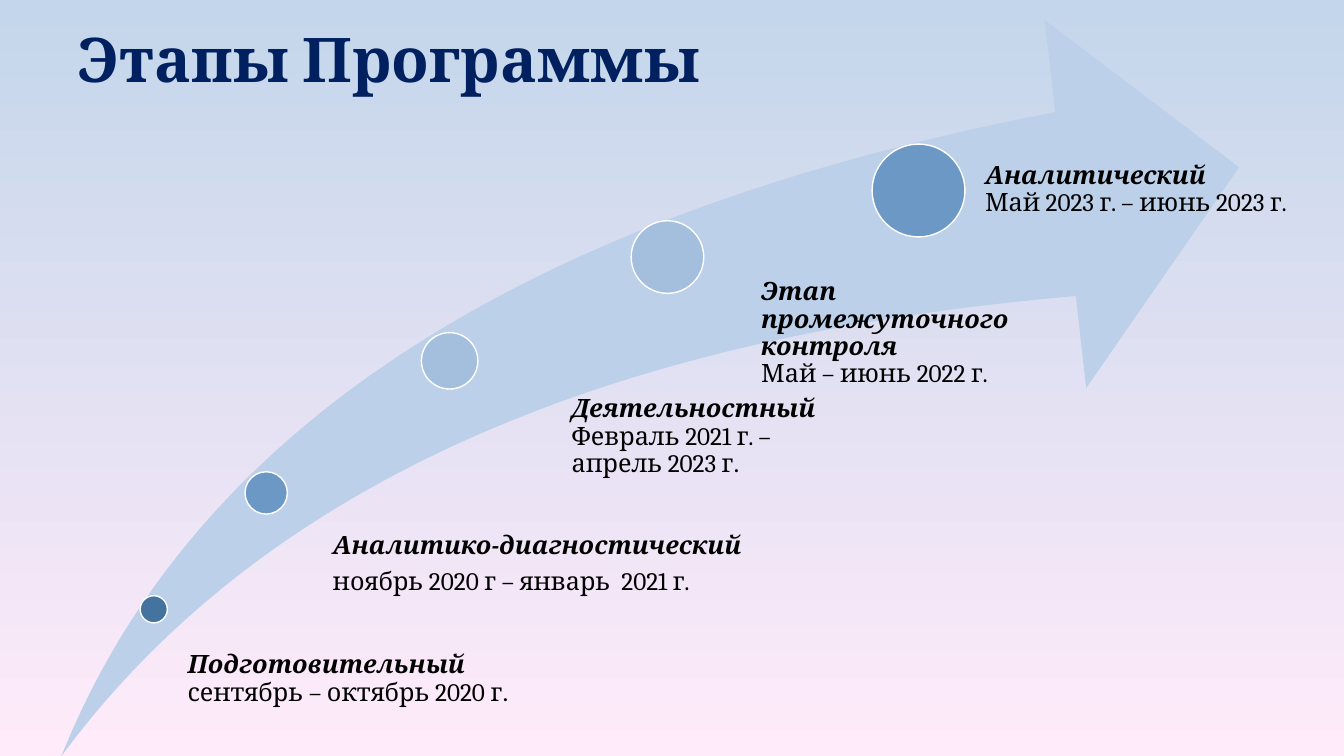
from dataclasses import dataclass

import pptx
import pptx.dml.color
import pptx.enum.shapes
import pptx.enum.text
import pptx.slide
import pptx.text.text
import pptx.util
from pptx.util import Inches


@dataclass(frozen=True)
class Theme:
    sky: str = "C4D6EB"
    blush: str = "FFEBFA"
    arrow: str = "BDD0E9"
    outline: str = "FFFFFF"
    heading: str = "002060"
    body: str = "000000"
    dark: str = "43739E"
    medium: str = "6C98C5"
    light: str = "A4BEDE"
    font: str = "Cambria"
    dot_font: str = "Calibri"
    heading_size: int = 44
    body_size: int = 18
    line_spacing: float = 0.9


@dataclass(frozen=True)
class Stage:
    name: str
    period: str
    marker: tuple[float, float, float]  # left, top, diameter
    color: str
    caption: tuple[float, float, float, float]  # left, top, width, height
    inset: float
    final_dot: str = ""  # full stop set in the second font
    space_after: float = 0


THEME = Theme()
STAGES = [
    Stage("Подготовительный", "сентябрь – октябрь 2020 г", (1.39, 5.91, 0.27),
          THEME.dark, (1.72, 6.47, 4.29, 0.76), 0.14, final_dot="."),
    Stage("Аналитико-диагностический", "ноябрь 2020 г – январь  2021 г.", (2.43, 4.68, 0.42),
          THEME.medium, (3.08, 5.28, 7.01, 0.95), 0.22, space_after=6.3),
    Stage("Деятельностный", "Февраль 2021 г. – апрель 2023 г", (4.18, 3.3, 0.56),
          THEME.light, (5.37, 3.93, 2.81, 1.29), 0.3, final_dot="."),
    Stage("Этап промежуточного контроля", "Май – июнь 2022 г.", (6.26, 2.19, 0.72),
          THEME.light, (7.17, 2.77, 3.48, 3.96), 0.38),
    Stage("Аналитический", "Май 2023 г. – июнь 2023 г.", (8.65, 1.43, 0.92),
          THEME.medium, (9.28, 1.61, 4.25, 1.16), 0.49),
]


def rgb(color: str) -> pptx.dml.color.RGBColor:
    return pptx.dml.color.RGBColor.from_string(color)


def add_run(paragraph: pptx.text.text._Paragraph, text: str, size: int, color: str,
            font: str = THEME.font, bold: bool = False, italic: bool = False) -> None:
    run = paragraph.add_run()
    run.text = text
    run.font.name = font
    run.font.size = pptx.util.Pt(size)
    run.font.bold = bold
    run.font.italic = italic
    run.font.color.rgb = rgb(color)


def paint_background(slide: pptx.slide.Slide) -> None:
    fill = slide.background.fill
    fill.gradient()
    fill.gradient_angle = 270
    for stop, position, color in zip(fill.gradient_stops, (0, 1), (THEME.sky, THEME.blush)):
        stop.position = position
        stop.color.rgb = rgb(color)


def add_heading(slide: pptx.slide.Slide, text: str) -> None:
    heading = slide.shapes.add_textbox(Inches(-1.89), Inches(-0.1), Inches(11.5), Inches(1.45))
    frame = heading.text_frame
    frame.word_wrap = True
    frame.vertical_anchor = pptx.enum.text.MSO_ANCHOR.MIDDLE
    paragraph = frame.paragraphs[0]
    paragraph.alignment = pptx.enum.text.PP_ALIGN.CENTER
    paragraph.line_spacing = THEME.line_spacing
    add_run(paragraph, text, THEME.heading_size, THEME.heading, bold=True)


def add_growth_arrow(slide: pptx.slide.Slide) -> None:
    arrow = slide.shapes.add_shape(pptx.enum.shapes.MSO_SHAPE.SWOOSH_ARROW,
                                   Inches(0.61), Inches(0.2), Inches(11.68), Inches(7.3))
    arrow.adjustments[0] = 0.25
    arrow.adjustments[1] = 0.25
    arrow.shadow.inherit = False
    arrow.fill.solid()
    arrow.fill.fore_color.rgb = rgb(THEME.arrow)
    arrow.line.fill.background()


def add_marker(slide: pptx.slide.Slide, stage: Stage) -> None:
    left, top, diameter = map(Inches, stage.marker)
    marker = slide.shapes.add_shape(pptx.enum.shapes.MSO_SHAPE.OVAL, left, top, diameter, diameter)
    marker.shadow.inherit = False
    marker.fill.solid()
    marker.fill.fore_color.rgb = rgb(stage.color)
    marker.line.color.rgb = rgb(THEME.outline)
    marker.line.width = pptx.util.Pt(1)


def add_caption(slide: pptx.slide.Slide, stage: Stage) -> None:
    frame = slide.shapes.add_textbox(*map(Inches, stage.caption)).text_frame
    frame.word_wrap = True
    frame.margin_left = Inches(stage.inset)
    frame.margin_top = frame.margin_right = frame.margin_bottom = 0

    name, period = frame.paragraphs[0], frame.add_paragraph()
    for paragraph in (name, period):
        paragraph.line_spacing = THEME.line_spacing
        paragraph.space_after = pptx.util.Pt(stage.space_after)
    add_run(name, stage.name, THEME.body_size, THEME.body, bold=True, italic=True)
    add_run(period, stage.period, THEME.body_size, THEME.body)
    if stage.final_dot:
        add_run(period, stage.final_dot, THEME.body_size, THEME.body, font=THEME.dot_font)


def main() -> None:
    presentation = pptx.Presentation()
    presentation.slide_width = Inches(13.33)
    presentation.slide_height = Inches(7.5)
    slide = presentation.slides.add_slide(presentation.slide_layouts[6])

    # Background, heading and arrow
    paint_background(slide)
    add_heading(slide, "Этапы Программы")
    add_growth_arrow(slide)

    # Stages along the arrow
    for stage in STAGES:
        add_marker(slide, stage)
        add_caption(slide, stage)

    presentation.save("out.pptx")


if __name__ == "__main__":
    main()
